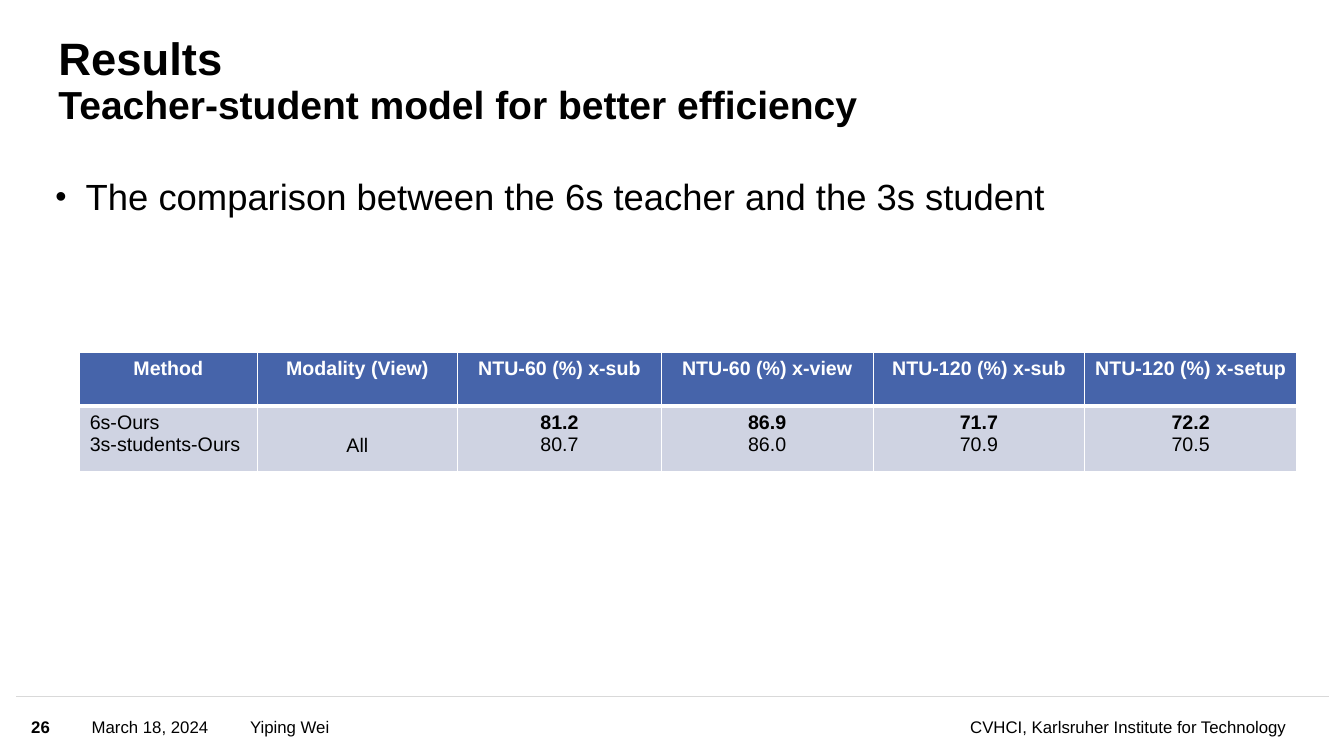
import pptx
import pptx.dml.color
import pptx.enum.shapes
import pptx.enum.text
import pptx.oxml
import pptx.oxml.ns
import pptx.util
from lxml import etree

Inches = pptx.util.Inches
Pt = pptx.util.Pt
RGBColor = pptx.dml.color.RGBColor
ALIGN = pptx.enum.text.PP_ALIGN
ANCHOR = pptx.enum.text.MSO_ANCHOR
qn = pptx.oxml.ns.qn

BLACK = RGBColor(0x00, 0x00, 0x00)
WHITE = RGBColor(0xFF, 0xFF, 0xFF)
RULE_GREY = RGBColor(0xD9, 0xD9, 0xD9)
HEADER_BLUE = RGBColor(0x46, 0x64, 0xAA)
ROW_BLUE = RGBColor(0xCF, 0xD3, 0xE2)

COLUMN_WIDTHS = [1.76, 1.99, 2.02, 2.1, 2.1, 2.1]
ROW_HEIGHTS = [0.53, 0.65]
HEADERS = ["Method", "Modality (View)", "NTU-60 (%) x-sub", "NTU-60 (%) x-view",
           "NTU-120 (%) x-sub", "NTU-120 (%) x-setup"]
RESULTS = ["6s-Ours\n3s-students-Ours", "All", "81.2\n80.7", "86.9\n86.0",
           "71.7\n70.9", "72.2\n70.5"]


class SlideBuilder:
    font = "Arial"

    def __init__(self, slide):
        self.slide = slide

    def style(self, r, size, color=BLACK, bold=False):
        r.font.name = self.font
        r.font.size = Pt(size)
        r.font.color.rgb = color
        r.font.bold = bold

    def text(self, box, text, sizes, bold=False, align=ALIGN.LEFT, anchor=ANCHOR.MIDDLE):
        """Add a one-paragraph box; sizes holds one point size per line."""
        sp = self.slide.shapes.add_textbox(*map(Inches, box))
        tf = sp.text_frame
        tf.word_wrap = True
        tf.vertical_anchor = anchor
        tf.margin_left = tf.margin_top = tf.margin_right = tf.margin_bottom = 0
        tf.text = text
        p = tf.paragraphs[0]
        p.alignment = align
        for r, size in zip(p.runs, sizes):
            self.style(r, size, bold=bold)
        return p

    def bullet(self, p, indent, percent):
        pPr = p._p.get_or_add_pPr()
        pPr.set("marL", str(Inches(indent)))
        pPr.set("indent", str(-Inches(indent)))
        etree.SubElement(pPr, qn("a:buSzPct"), val=str(percent * 1000))
        etree.SubElement(pPr, qn("a:buFont"), typeface=self.font)
        etree.SubElement(pPr, qn("a:buChar"), char="•")

    def line(self, x1, y1, x2, y2, color, width):
        s = self.slide.shapes.add_connector(
            pptx.enum.shapes.MSO_CONNECTOR.STRAIGHT, *map(Inches, (x1, y1, x2, y2)))
        s.line.color.rgb = color
        s.line.width = Pt(width)
        etree.SubElement(s._element.spPr, qn("a:effectLst"))

    def borders(self, cell, bottom):
        tcPr = cell._tc.get_or_add_tcPr()
        widths = {"lnL": 1, "lnR": 1, "lnT": 1, "lnB": bottom}
        for i, (side, width) in enumerate(widths.items()):
            ln = etree.Element(qn("a:" + side), w=str(Pt(width)))
            fill = etree.SubElement(ln, qn("a:solidFill"))
            etree.SubElement(fill, qn("a:srgbClr"), val=str(WHITE))
            tcPr.insert(i, ln)

    def cell(self, cell, text, fill, color, bold_lines, align, bottom):
        cell.fill.solid()
        cell.fill.fore_color.rgb = fill
        self.borders(cell, bottom)
        if align == ALIGN.CENTER:
            cell.margin_left = cell.margin_right = Inches(0.05)
        cell.text_frame.text = text
        for i, p in enumerate(cell.text_frame.paragraphs):
            p.alignment = align
            for r in p.runs:
                self.style(r, 14, color, bold=i < bold_lines)

    def results_table(self, left, top):
        table = self.slide.shapes.add_table(
            len(ROW_HEIGHTS), len(COLUMN_WIDTHS), Inches(left), Inches(top),
            Inches(sum(COLUMN_WIDTHS)), Inches(sum(ROW_HEIGHTS))).table
        table.horz_banding = False
        for column, width in zip(table.columns, COLUMN_WIDTHS):
            column.width = Inches(width)
        for row, height in zip(table.rows, ROW_HEIGHTS):
            row.height = Inches(height)
        for col, (header, result) in enumerate(zip(HEADERS, RESULTS)):
            self.cell(table.cell(0, col), header, HEADER_BLUE, WHITE, 1, ALIGN.CENTER, 3)
            self.cell(table.cell(1, col), result, ROW_BLUE, BLACK, 1 if col > 1 else 0,
                      ALIGN.CENTER if col else ALIGN.LEFT, 1)
        # The shared modality lines up with the student row
        table.cell(1, 1).margin_top = Inches(0.28)


def main():
    prs = pptx.Presentation()
    prs.slide_width = Inches(13.33)
    prs.slide_height = Inches(7.5)
    s = SlideBuilder(prs.slides.add_slide(prs.slide_layouts[6]))

    s.line(0.16, 6.91, 13.18, 6.91, RULE_GREY, 1)
    for left, width, text, bold, align in [
        (0.31, 0.48, "26", True, ALIGN.LEFT),
        (0.91, 1.5, "March 18, 2024", False, ALIGN.LEFT),
        (2.48, 5.37, "Yiping Wei", False, ALIGN.LEFT),
        (8.03, 4.73, "CVHCI, Karlsruher Institute for Technology", False, ALIGN.RIGHT),
    ]:
        s.text((left, 6.92, width, 0.58), text, [12], bold, align)

    title = s.text((0.58, 0.43, 10.02, 0.84),
                   "Results\vTeacher-student model for better efficiency",
                   [32.4, 27.9], bold=True, anchor=ANCHOR.BOTTOM)
    title.line_spacing = 0.9

    s.results_table(0.79, 3.5)

    body = s.text((0.55, 1.78, 12.17, 4.91),
                  "The comparison between the 6s teacher and the 3s student",
                  [26], anchor=ANCHOR.TOP)
    s.bullet(body, 0.3, 88)
    body.line_spacing = 0.9

    prs.save("out.pptx")


if __name__ == "__main__":
    main()
